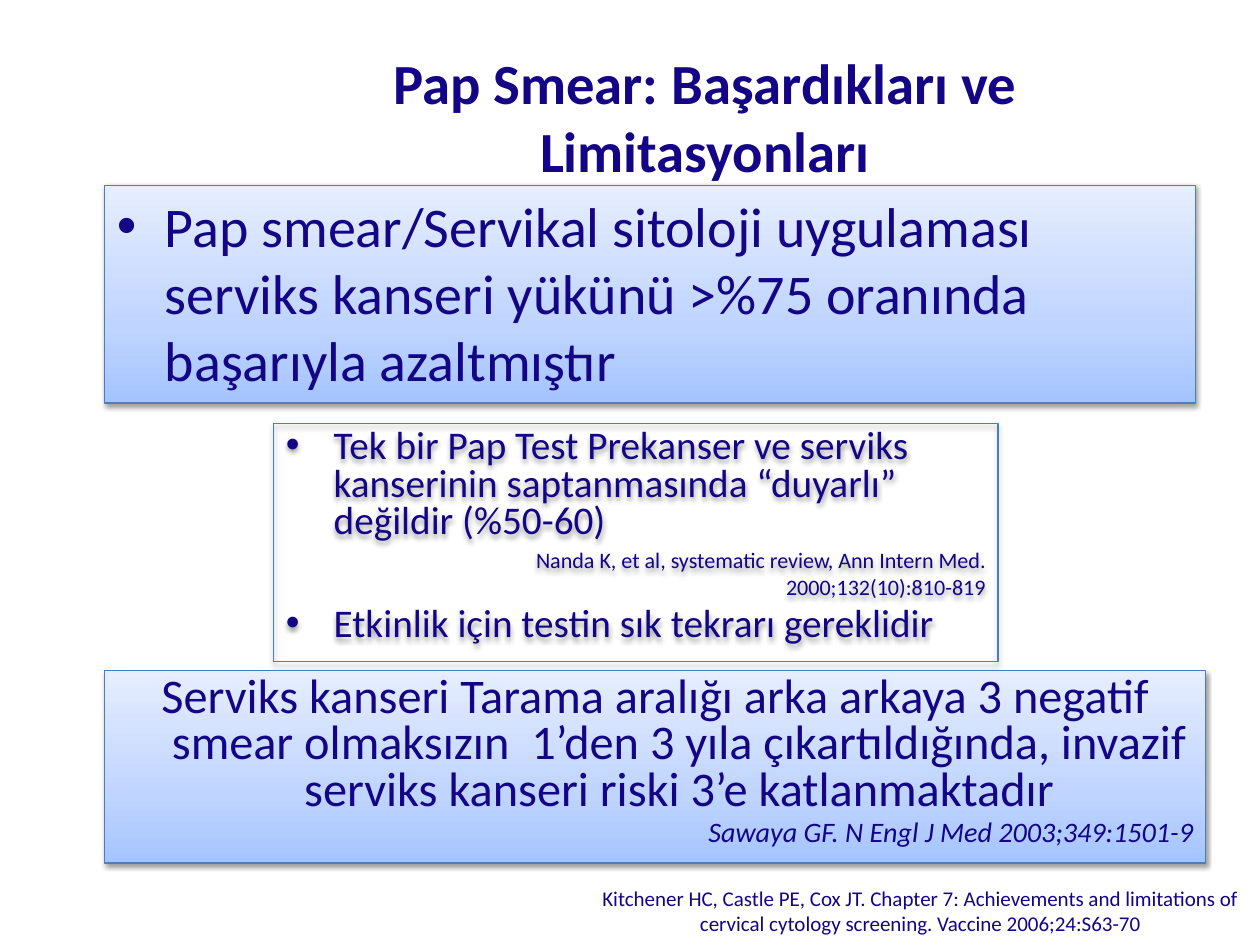
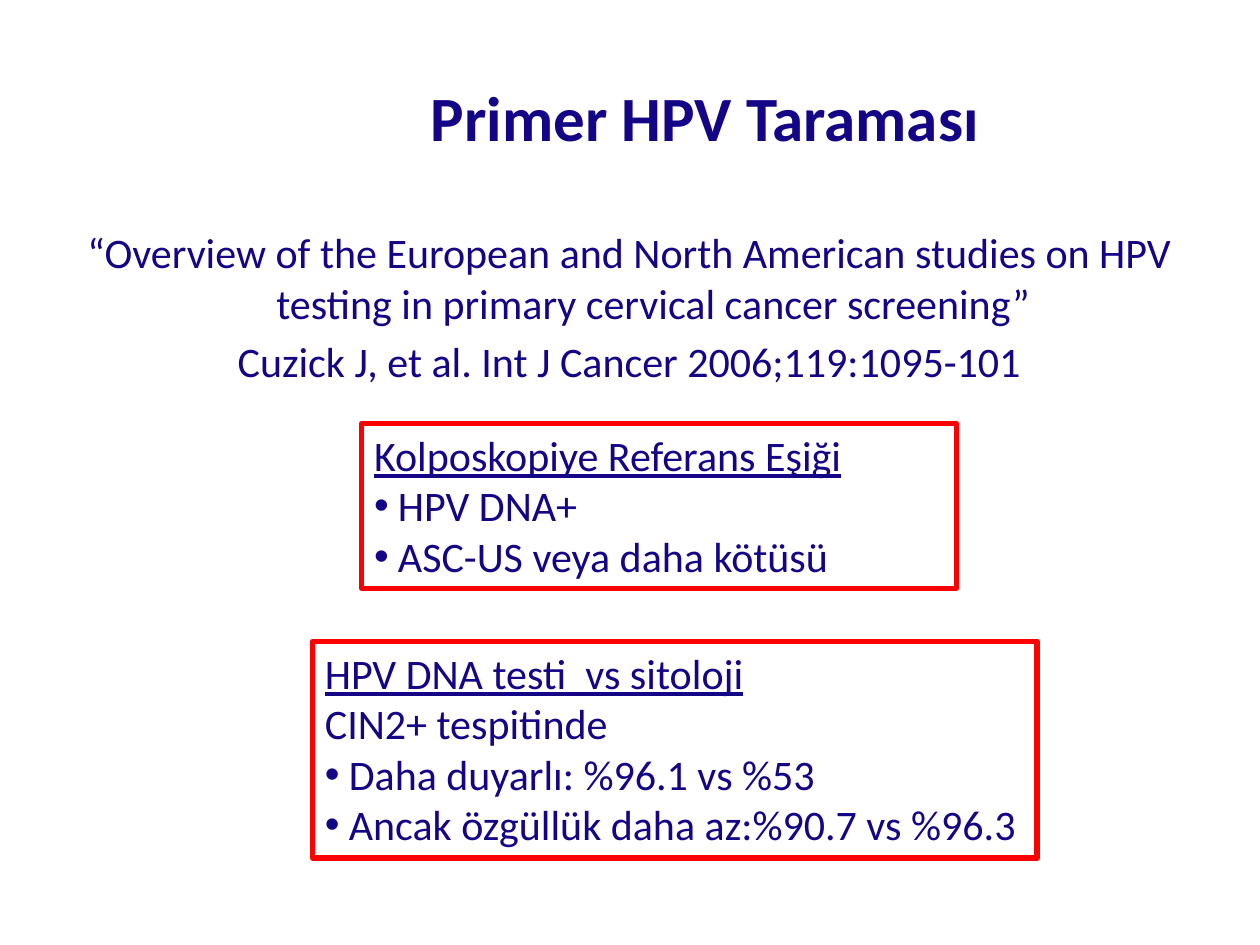
from lxml import etree
from pptx import Presentation
from pptx import util as u
from pptx.dml.color import RGBColor
from pptx.enum import shapes, text
from pptx.oxml import parse_xml
from pptx.oxml.ns import nsdecls, qn

theme = {
    "font": "Calibri", "ink": "140587", "edge": "4B7EBC", "red": "FF0000",
    "grad": [(0, "A4C4FF"), (35, "BFD4FF"), (100, "E6EEFF")],
    "head": 32.4, "big": 36, "lead": 32, "risk": 27.6, "body": 24,
    "point": 22.4, "cite": 16.1, "ref": 12.6, "foot": 12,
}
LEFT, MID, RIGHT = text.PP_ALIGN.LEFT, text.PP_ALIGN.CENTER, text.PP_ALIGN.RIGHT
TOP, CENTER = text.MSO_ANCHOR.TOP, text.MSO_ANCHOR.MIDDLE


def add_box(slide, at, paras, edge=None, width=0.75, grad=False, glow=False, anchor=TOP):
    """Add a text box or an outlined rectangle, then fill in its paragraphs."""
    place = [u.Inches(n) for n in at]
    if edge:
        box = slide.shapes.add_shape(shapes.MSO_SHAPE.RECTANGLE, *place)
        box.shadow.inherit = False
        box.fill.background()
        box.line.color.rgb = RGBColor.from_string(theme[edge])
        box.line.width = u.Pt(width)
    else:
        box = slide.shapes.add_textbox(*place)
    props = box._element.spPr
    if grad:
        stops = "".join(f'<a:gs pos="{pos * 1000}"><a:srgbClr val="{tone}"/></a:gs>'
                        for pos, tone in theme["grad"])
        props.replace(props.find(qn("a:noFill")), parse_xml(
            f'<a:gradFill {nsdecls("a")} rotWithShape="1"><a:gsLst>{stops}</a:gsLst>'
            '<a:lin ang="16200000" scaled="0"/></a:gradFill>'))
    if glow:
        props.find(qn("a:effectLst")).append(parse_xml(
            f'<a:outerShdw {nsdecls("a")} blurRad="{u.Pt(3.1)}" dist="{u.Pt(1.6)}" '
            'dir="5400000" rotWithShape="0"><a:srgbClr val="000000">'
            '<a:alpha val="38000"/></a:srgbClr></a:outerShdw>'))
    frame = box.text_frame
    frame.word_wrap, frame.vertical_anchor = True, anchor
    for i, (words, size, look) in enumerate(paras):
        para = frame.paragraphs[0] if i == 0 else frame.add_paragraph()
        add_text(para, words, theme[size], look, i == 0)


def add_text(para, words, size, look, first):
    """Write one paragraph; look holds its indents, bullet, spacing and font values."""
    ppr = para._p.get_or_add_pPr()
    margin, hang = look.get("indent", (0, 0))
    ppr.set("marL", str(u.Inches(margin)))
    ppr.set("indent", str(u.Inches(hang)))
    if look.get("bullet"):
        etree.SubElement(ppr, qn("a:buFont")).set("typeface", "Arial")
        etree.SubElement(ppr, qn("a:buChar")).set("char", "•")
    else:
        etree.SubElement(ppr, qn("a:buNone"))
    before = 0 if first else look.get("gap", 0) * size
    form = {"alignment": look.get("align", LEFT), "space_before": u.Pt(before),
            "line_spacing": look.get("line", 1.0)}
    for key, val in form.items():
        setattr(para, key, val)
    run = para.add_run()
    run.text = words
    style = {"name": theme["font"], "size": u.Pt(size), **look.get("font", {})}
    for key, val in style.items():
        setattr(run.font, key, val)
    run.font.color.rgb = RGBColor.from_string(theme["ink"])


# Paragraph looks
hang = {"indent": (0.38, -0.38), "gap": 0.2}
title = {"align": MID, "font": {"bold": True}}
lead = {**hang, "bullet": True}
point = {**lead, "line": 0.8}
ref = {"indent": (0.88, 0), "gap": 0.2, "align": RIGHT}
risk = {**hang, "line": 0.8, "align": MID}
cite = {**risk, "align": RIGHT, "font": {"italic": True}}
quote = {**hang, "align": MID}
foot = {"align": MID}
under = {"font": {"underline": True}}
item = {"indent": (0.19, -0.19), "bullet": True}
plain = {}

# Box styles
panel = {"edge": "edge", "grad": True, "glow": True}
frame = {"edge": "edge", "glow": True}
alert = {"edge": "red", "width": 3}

heads = [("Pap Smear: Başardıkları ve Limitasyonları", "head"),
         ("Primer HPV Taraması", "big")]

# Each slide: place, box style, paragraphs
pages = [
    [
        ((0.83, 1.47, 8.66, 1.73), panel, [
            ("Pap smear/Servikal sitoloji uygulaması serviks kanseri yükünü >%75 "
             "oranında başarıyla azaltmıştır", "lead", lead)]),
        ((4.61, 6.98, 5.39, 0.52), {}, [
            ("Kitchener HC, Castle PE, Cox JT. Chapter 7: Achievements and limitations of",
             "foot", foot),
            ("cervical cytology screening. Vaccine 2006;24:S63-70", "foot", foot)]),
        ((2.17, 3.36, 5.75, 1.89), frame, [
            ("Tek bir Pap Test Prekanser ve serviks kanserinin saptanmasında “duyarlı” "
             "değildir (%50-60)", "point", point),
            ("Nanda K, et al, systematic review, Ann Intern Med. 2000;132(10):810-819",
             "ref", ref),
            ("Etkinlik için testin sık tekrarı gereklidir", "point", point)]),
        ((0.83, 5.32, 8.74, 1.53), panel, [
            ("Serviks kanseri Tarama aralığı arka arkaya 3 negatif smear olmaksızın  1’den "
             "3 yıla çıkartıldığında, invazif serviks kanseri riski 3’e katlanmaktadır",
             "risk", risk),
            ("Sawaya GF. N Engl J Med 2003;349:1501-9", "cite", cite)]),
    ],
    [
        ((0.43, 1.75, 9.13, 1.29), {}, [
            ("“Overview of the European and North American studies on HPV testing in "
             "primary cervical cancer screening”", "body", quote),
            ("Cuzick J, et al. Int J Cancer 2006;119:1095-101", "body", quote)]),
        ((2.48, 5.09, 5.75, 1.72), alert, [
            ("HPV DNA testi  vs sitoloji", "body", under),
            ("CIN2+ tespitinde", "body", plain),
            ("Daha duyarlı: %96.1 vs %53", "body", item),
            ("Ancak özgüllük daha az:%90.7 vs %96.3", "body", item)]),
        ((2.87, 3.36, 4.72, 1.31), alert, [
            ("Kolposkopiye Referans Eşiği", "body", under),
            ("HPV DNA+", "body", item),
            ("ASC-US veya daha kötüsü", "body", item)]),
    ],
]

# Build the slides
deck = Presentation()
deck.slide_width, deck.slide_height = u.Inches(10), u.Inches(7.5)
for (words, size), boxes in zip(heads, pages):
    slide = deck.slides.add_slide(deck.slide_layouts[6])
    add_box(slide, (1.69, 0.29, 7.81, 1.26), [(words, size, title)], anchor=CENTER)
    for at, style, paras in boxes:
        add_box(slide, at, paras, **style)

deck.save("out.pptx")
